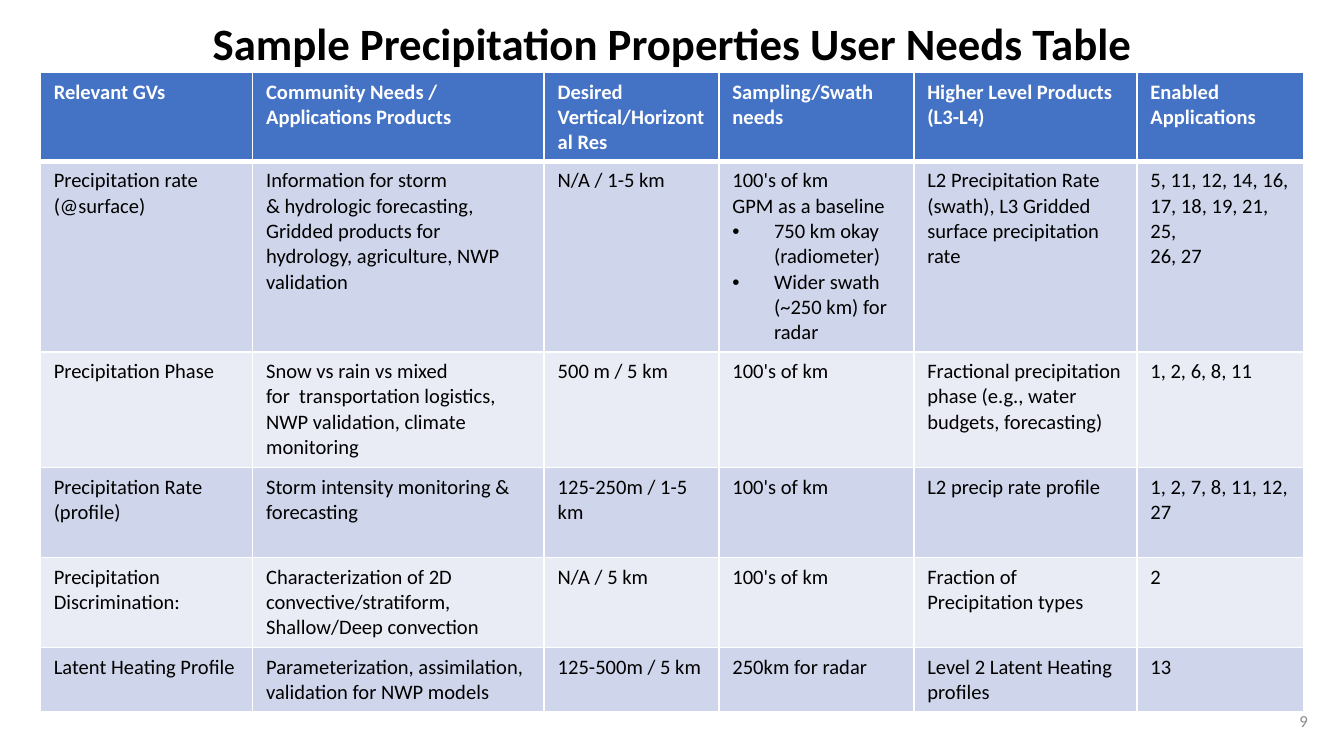
import pptx
import pptx.dml.color
import pptx.enum.text
import pptx.oxml
import pptx.oxml.ns
import pptx.util

Inches = pptx.util.Inches
Pt = pptx.util.Pt
ALIGN = pptx.enum.text.PP_ALIGN

FONT = "Calibri"
COLORS = {
    "text": "000000",
    "number": "8C8C8C",
    "white": "FFFFFF",
    "header": "4472C4",
    "odd": "CFD5EA",
    "even": "E9EBF5",
}
BULLET = "• "
HARD_SPACE_MARK = "_"
HARD_SPACE = chr(160)
COLUMN_WIDTHS = [1.58, 2.17, 1.3, 1.45, 1.66, 1.24]
ROW_HEIGHTS = [0.66, 1.42, 0.86, 0.67, 0.67, 0.48]
USER_NEEDS = [
    ["Relevant GVs", "Community Needs / Applications Products",
     "Desired Vertical/Horizontal Res", "Sampling/Swath needs",
     "Higher Level Products (L3-L4)", "Enabled Applications"],
    ["Precipitation rate (@surface)",
     "Information for storm &_hydrologic_forecasting, Gridded products for "
     "hydrology,_agriculture, NWP validation",
     "N/A / 1-5 km",
     "100's of km\nGPM as a baseline\n• 750 km okay (radiometer)\n"
     "• Wider swath (~250 km) for radar",
     "L2 Precipitation Rate (swath), L3 Gridded surface precipitation rate",
     "5, 11, 12, 14, 16, 17, 18, 19, 21, 25,\n26, 27"],
    ["Precipitation Phase_",
     "Snow vs rain vs mixed for__transportation logistics, NWP validation, "
     "climate monitoring",
     "500 m / 5 km", "100's of km",
     "Fractional precipitation phase (e.g., water budgets, forecasting)",
     "1, 2, 6, 8, 11_"],
    ["Precipitation Rate (profile)", "Storm intensity monitoring & forecasting",
     "125-250m / 1-5 km", "100's of km", "L2 precip rate profile",
     "1, 2, 7, 8, 11, 12, 27_"],
    ["Precipitation Discrimination:",
     "Characterization of 2D convective/stratiform, Shallow/Deep convection",
     "N/A / 5 km", "100's of km", "Fraction of Precipitation types", "2"],
    ["Latent Heating Profile",
     "Parameterization,_assimilation, validation_for NWP models",
     "125-500m / 5 km", "250km for radar", "Level 2 Latent Heating profiles",
     "13"],
]


def rgb(name):
    return pptx.dml.color.RGBColor.from_string(COLORS[name])


def style_paragraph(paragraph, size, color, bold=False):
    for span in paragraph.runs:
        span.font.name = FONT
        span.font.size = Pt(size)
        span.font.bold = bold
        span.font.color.rgb = rgb(color)


def add_text(page, text, left, top, width, height, size, color, align, bold=False):
    box = page.shapes.add_textbox(
        Inches(left), Inches(top), Inches(width), Inches(height))
    frame = box.text_frame
    frame.word_wrap = True
    frame.vertical_anchor = pptx.enum.text.MSO_ANCHOR.MIDDLE
    frame.text = text
    paragraph = frame.paragraphs[0]
    paragraph.alignment = align
    style_paragraph(paragraph, size, color, bold)
    return paragraph


def set_borders(cell, top, bottom):
    properties = cell._tc.get_or_add_tcPr()
    for side, width in (("L", 1), ("R", 1), ("T", top), ("B", bottom)):
        properties.append(pptx.oxml.parse_xml(
            f'<a:ln{side} {pptx.oxml.ns.nsdecls("a")} w="{Pt(width)}">'
            f'<a:solidFill><a:srgbClr val="{COLORS["white"]}"/></a:solidFill>'
            f'</a:ln{side}>'))


def set_bullet(paragraph):
    properties = paragraph._p.get_or_add_pPr()
    properties.set("marL", str(Inches(0.31)))
    properties.set("indent", str(-Inches(0.31)))
    properties.append(pptx.oxml.parse_xml(
        f'<a:buFont {pptx.oxml.ns.nsdecls("a")} typeface="Arial"/>'))
    properties.append(pptx.oxml.parse_xml(
        f'<a:buChar {pptx.oxml.ns.nsdecls("a")} char="{BULLET.strip()}"/>'))


def fill_cell(cell, text, row):
    header = row == 0
    set_borders(cell, 3 if row == 1 else 1, 3 if header else 1)
    cell.fill.solid()
    cell.fill.fore_color.rgb = rgb("header" if header else "odd" if row % 2 else "even")
    lines = text.replace(HARD_SPACE_MARK, HARD_SPACE).split("\n")
    cell.text_frame.text = "\n".join(line.removeprefix(BULLET) for line in lines)
    for paragraph, line in zip(cell.text_frame.paragraphs, lines):
        if line.startswith(BULLET):
            set_bullet(paragraph)
        style_paragraph(paragraph, 11, "white" if header else "text", header)


def add_needs_table(page):
    table = page.shapes.add_table(
        len(ROW_HEIGHTS), len(COLUMN_WIDTHS), Inches(0.3), Inches(0.54),
        Inches(sum(COLUMN_WIDTHS)), Inches(sum(ROW_HEIGHTS))).table
    for column, width in zip(table.columns, COLUMN_WIDTHS):
        column.width = Inches(width)
    for index, (height, texts) in enumerate(zip(ROW_HEIGHTS, USER_NEEDS)):
        table.rows[index].height = Inches(height)
        for cell, text in zip(table.rows[index].cells, texts):
            fill_cell(cell, text, index)


def main():
    deck = pptx.Presentation()
    deck.slide_width = Inches(10)
    deck.slide_height = Inches(10 * 9 / 16)
    page = deck.slides.add_slide(deck.slide_layouts[6])
    add_text(page, "9", 7.58, 5.21, 2.25, 0.3, 9, "number", ALIGN.RIGHT)
    add_needs_table(page)
    title = add_text(page, "Sample Precipitation Properties User Needs Table",
                     0.69, -0.2, 8.62, 1.09, 24, "text", ALIGN.CENTER, True)
    title.line_spacing = 0.9
    deck.save("out.pptx")


if __name__ == "__main__":
    main()
